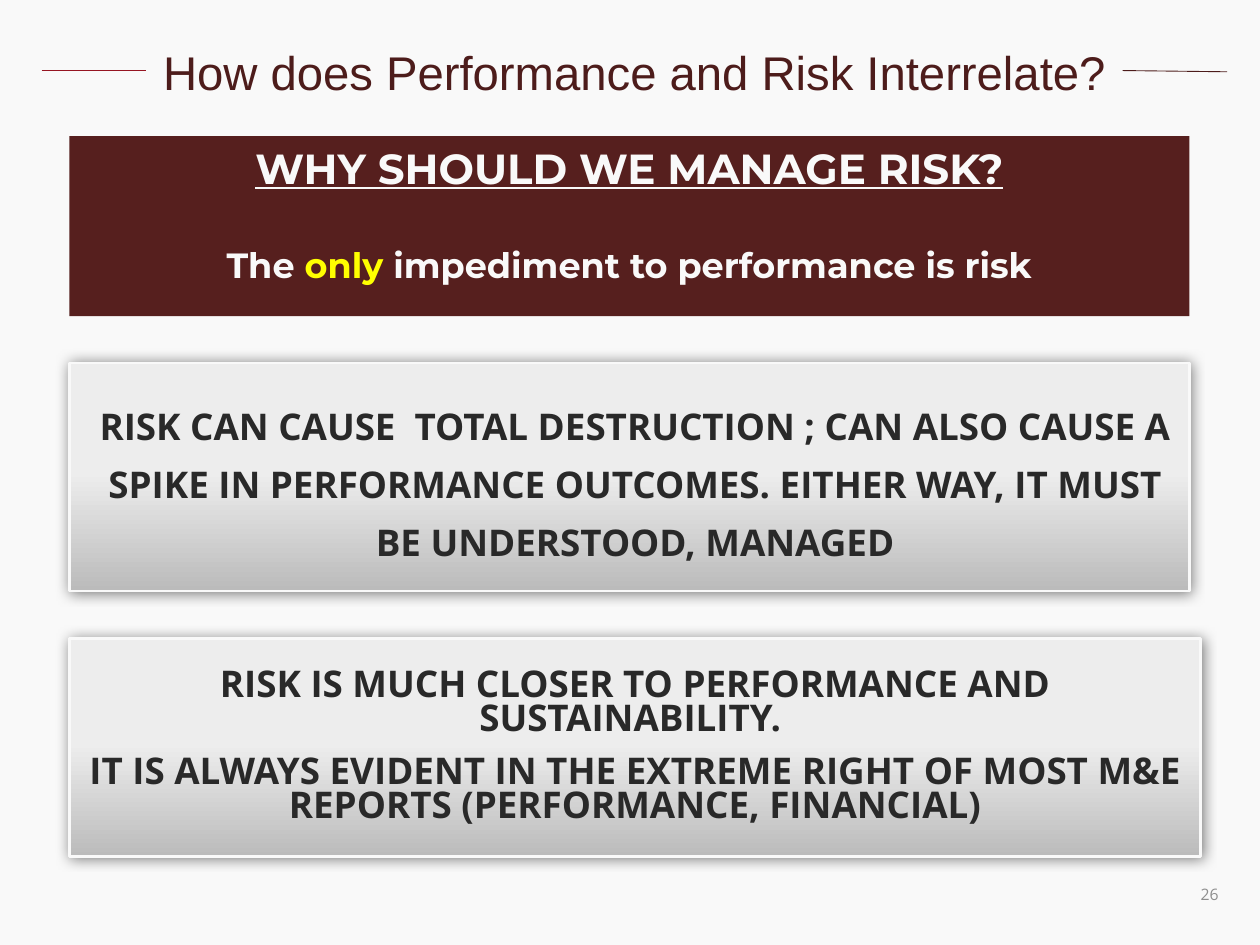
from lxml import etree
from pptx import Presentation
from pptx.dml.color import RGBColor
from pptx.enum.shapes import MSO_CONNECTOR, MSO_SHAPE
from pptx.enum.text import MSO_ANCHOR, PP_ALIGN
from pptx.oxml.ns import qn
from pptx.util import Inches, Pt

RECT = MSO_SHAPE.RECTANGLE
LINE = MSO_CONNECTOR.STRAIGHT
TOP, MIDDLE = MSO_ANCHOR.TOP, MSO_ANCHOR.MIDDLE
CENTER, RIGHT = PP_ALIGN.CENTER, PP_ALIGN.RIGHT
WINE, PALE, DARK = "4D1C1B", "F9F9F9", "292929"


def color(code):
    return RGBColor.from_string(code)


def apply(target, values):
    for name, value in values.items():
        setattr(target, name, value)


def add_para(frame, runs, first=False, **layout):
    """Fill the first paragraph or append one; runs are (text, font values, colour)."""
    para = frame.paragraphs[0] if first else frame.add_paragraph()
    apply(para, {"alignment": CENTER, **layout})
    for text, font, code in runs:
        run = para.add_run()
        run.text = text
        apply(run.font, font)
        run.font.color.rgb = color(code)
    return para


def add_label(slide, box, text, font, code, align):
    frame = slide.shapes.add_textbox(*map(Inches, box)).text_frame
    apply(frame, {"word_wrap": False, "vertical_anchor": MIDDLE})
    add_para(frame, [(text, font, code)], first=True, alignment=align)


def add_rule(slide, start, end, code):
    rule = slide.shapes.add_connector(LINE, *map(Inches, start + end))
    rule.line.color.rgb = color(code)
    rule.line.width = Pt(0.5)
    etree.SubElement(rule._element.spPr, qn("a:effectLst"))


def add_title(slide, box):
    left, top, width, height = box
    font = {"name": "Arial", "size": Pt(27)}
    add_label(slide, box, "How does Performance and Risk Interrelate?",
              font, WINE, CENTER)
    mid, right, reach = top + 0.27, left + width, 0.83
    add_rule(slide, (left - reach, mid), (left, mid), "961522")
    add_rule(slide, (right, mid), (right + reach, mid + 0.01), WINE)


def add_banner(slide, box):
    shape = slide.shapes.add_shape(RECT, *map(Inches, box))
    shape.shadow.inherit = False
    shape.fill.solid()
    shape.fill.fore_color.rgb = color("561F1E")
    shape.line.fill.background()
    frame = shape.text_frame
    apply(frame, {"word_wrap": True, "vertical_anchor": TOP})
    base = {"name": "Montserrat", "bold": True}
    head = {**base, "size": Pt(24), "underline": True}
    body = {**base, "size": Pt(20)}
    add_para(frame, [("WHY SHOULD WE MANAGE RISK?", head, PALE)], first=True)
    add_para(frame, [("The ", body, PALE), ("only", body, "FFFF00"),
                     (" impediment to performance is risk", body, PALE)],
             space_before=Pt(29))


def add_glow(shape):
    """Give the shape a soft dark shadow on all sides."""
    shape.shadow.inherit = False
    effects = shape._element.spPr.find(qn("a:effectLst"))
    shadow = etree.SubElement(effects, qn("a:outerShdw"),
                              blurRad=str(Pt(8)), dist="0", algn="ctr")
    black = etree.SubElement(shadow, qn("a:srgbClr"), val="000000")
    etree.SubElement(black, qn("a:alpha"), val="50000")


def add_panel(slide, box, texts, spacing, indent=0):
    shape = slide.shapes.add_shape(RECT, *map(Inches, box))
    shape.fill.gradient()
    shape.fill.gradient_angle = 270
    stops = [(0.48, "EDEDED"), (1, "BBBBBB")]
    for stop, (place, code) in zip(shape.fill.gradient_stops, stops):
        stop.position = place
        stop.color.rgb = color(code)
    shape.line.color.rgb = color(PALE)
    shape.line.width = Pt(1.5)
    add_glow(shape)
    frame = shape.text_frame
    apply(frame, {"word_wrap": True, "vertical_anchor": MIDDLE})
    for side in ("left", "top", "right", "bottom"):
        setattr(frame, f"margin_{side}", Inches(0.12))
    font = {"name": "Open Sans", "size": Pt(21), "bold": True}
    for index, text in enumerate(texts):
        para = add_para(frame, [(text, font, DARK)], first=index == 0,
                        line_spacing=spacing, space_before=Pt(10.5))
        para._p.get_or_add_pPr().set("marL", str(Inches(indent)))


def main():
    deck = Presentation()
    apply(deck, {"slide_width": Inches(10), "slide_height": Inches(7.5)})
    slide = deck.slides.add_slide(deck.slide_layouts[6])
    slide.background.fill.solid()
    slide.background.fill.fore_color.rgb = color(PALE)
    add_label(slide, (7.69, 6.85, 2.08, 0.5), "26",
              {"name": "Open Sans", "size": Pt(9)}, "8E8E8E", RIGHT)
    add_title(slide, (1.16, 0.29, 7.75, 0.56))
    add_banner(slide, (0.55, 1.08, 8.89, 1.43))
    add_panel(slide, (0.55, 2.88, 8.89, 1.81), [
        "RISK CAN CAUSE  TOTAL DESTRUCTION ; CAN ALSO CAUSE A SPIKE IN "
        "PERFORMANCE OUTCOMES. EITHER WAY, IT MUST BE UNDERSTOOD, MANAGED",
    ], 1.32, 0.09)
    add_panel(slide, (0.55, 5.07, 8.98, 1.73), [
        "RISK IS MUCH CLOSER TO PERFORMANCE AND SUSTAINABILITY. ",
        "IT IS ALWAYS EVIDENT IN THE EXTREME RIGHT OF MOST M&E REPORTS "
        "(PERFORMANCE, FINANCIAL)",
    ], 0.78)
    deck.save("out.pptx")


if __name__ == "__main__":
    main()
